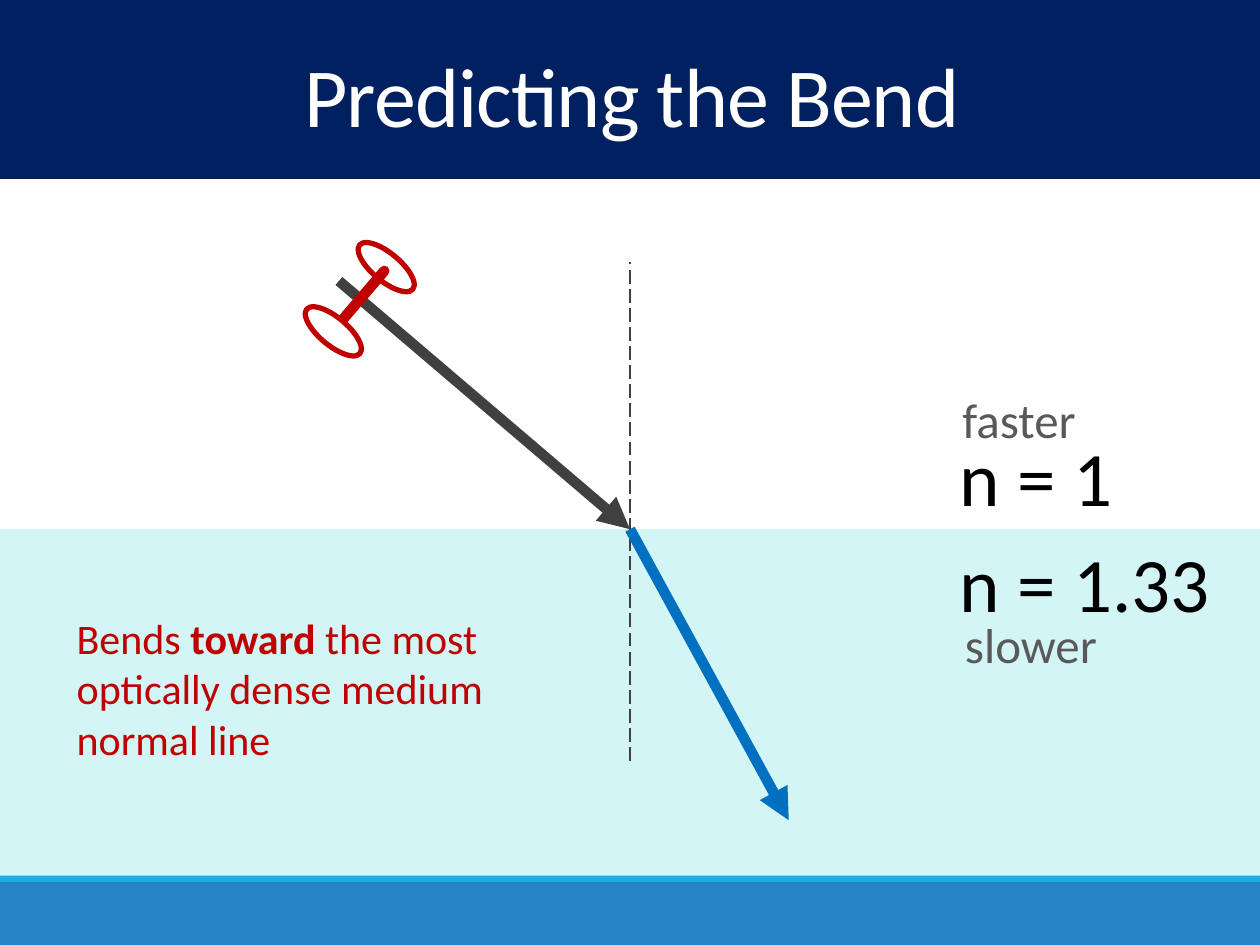
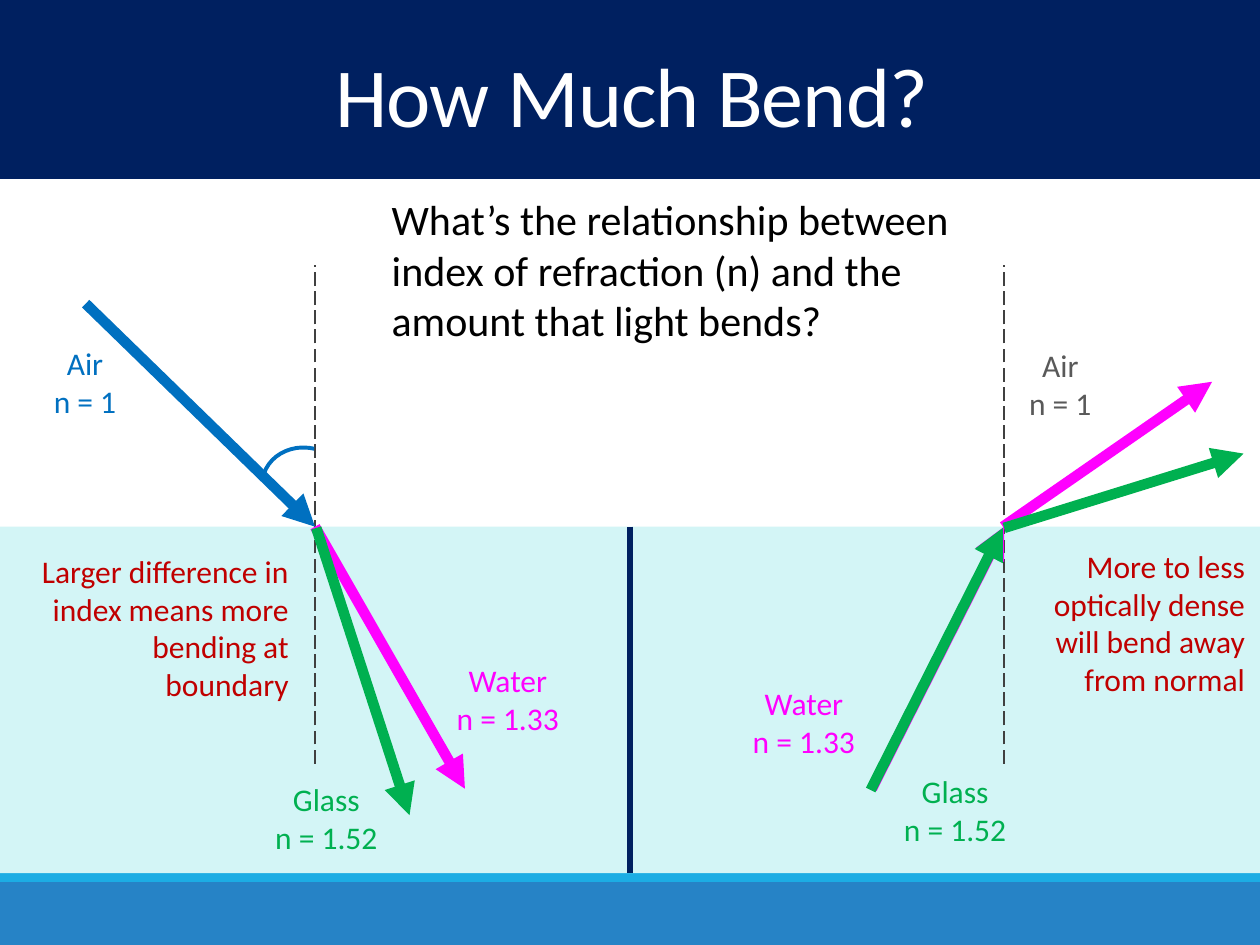
from lxml.etree import SubElement
from pptx import Presentation
from pptx.dml.color import RGBColor
from pptx.enum.dml import MSO_LINE
from pptx.enum.shapes import MSO_CONNECTOR, MSO_SHAPE
from pptx.enum.text import MSO_ANCHOR, MSO_AUTO_SIZE, PP_ALIGN
from pptx.oxml.ns import qn
from pptx.util import Inches, Pt

NAVY = RGBColor(0x00, 0x20, 0x60)
FOOTER_BLUE = RGBColor(0x26, 0x83, 0xC6)
FOOTER_EDGE = RGBColor(0x1C, 0xAD, 0xE4)
WATER = RGBColor(0xD3, 0xF5, 0xF6)
RAY_BLUE = RGBColor(0x00, 0x70, 0xC0)
MAGENTA = RGBColor(0xFF, 0x00, 0xFF)
GREEN = RGBColor(0x00, 0xB0, 0x50)
RED = RGBColor(0xC0, 0x00, 0x00)
CHARCOAL = RGBColor(0x40, 0x40, 0x40)
GREY = RGBColor(0x59, 0x59, 0x59)
BLACK = RGBColor(0x00, 0x00, 0x00)
WHITE = RGBColor(0xFF, 0xFF, 0xFF)

FONT = "Calibri"
COLUMNS, ROWS = 100, 75
TOP, BOTTOM = 0, 2
RAY_WIDTH = 6


class Deck:
    """Holds the style and the current slide; places are in grid columns and rows."""

    def __init__(self):
        self.prs = Presentation()
        self.prs.slide_width, self.prs.slide_height = Inches(10), Inches(7.5)
        self.slide = None

    def grid(self, *places):
        """Turn alternating columns and rows into lengths."""
        cells = (self.prs.slide_width / COLUMNS, self.prs.slide_height / ROWS)
        return [round(place * cells[i % 2]) for i, place in enumerate(places)]

    def new_slide(self, heading):
        self.slide = self.prs.slides.add_slide(self.prs.slide_layouts[5])
        self.band(70, 5, FOOTER_BLUE)
        self.band(69.3, 0.7, FOOTER_EDGE)
        self.band(0, 14.2, NAVY)
        title = self.slide.shapes.title
        self.slide.shapes._spTree.append(title._element)  # above the band
        title.left, title.top, title.width, title.height = self.grid(0.3, 3.9, 99.7, 8.4)
        title.text_frame.vertical_anchor = MSO_ANCHOR.MIDDLE
        title.text_frame.auto_size = MSO_AUTO_SIZE.NONE
        paragraph = title.text_frame.paragraphs[0]
        paragraph.alignment = PP_ALIGN.CENTER
        paragraph.line_spacing = 0.85
        run = self.run(paragraph, heading, 48, WHITE)
        run._r.get_or_add_rPr().set("spc", "-50")

    def run(self, paragraph, words, size, color, bold=False):
        run = paragraph.add_run()
        run.text = words
        run.font.name, run.font.size, run.font.bold = FONT, Pt(size), bold
        run.font.color.rgb = color
        return run

    def shape(self, kind, place, fill=None, line=None, width=1.0, rotation=0):
        shape = self.slide.shapes.add_shape(kind, *self.grid(*place))
        shape.shadow.inherit = False
        shape.rotation = rotation
        if fill is None:
            shape.fill.background()
        else:
            shape.fill.solid()
            shape.fill.fore_color.rgb = fill
        if line is None:
            shape.line.fill.background()
        else:
            shape.line.color.rgb = line
            shape.line.width = Pt(width)
        return shape

    def band(self, row, height, color):
        """Draw a strip across the whole slide."""
        return self.shape(MSO_SHAPE.RECTANGLE, (0, row, COLUMNS, height), color)

    def line(self, start, end, color, width=RAY_WIDTH):
        line = self.slide.shapes.add_connector(
            MSO_CONNECTOR.STRAIGHT, *self.grid(*start, *end))
        line.line.color.rgb = color
        line.line.width = Pt(width)
        SubElement(line._element.spPr, qn("a:effectLst"))
        return line

    def ray(self, start, end, color):
        ray = self.line(start, end, color)
        SubElement(ray.line._get_or_add_ln(), qn("a:tailEnd"), type="triangle")
        return ray

    def normal(self, column, top, bottom):
        """Draw the dashed line perpendicular to the boundary."""
        self.line((column, bottom), (column, top), CHARCOAL, 1).line.dash_style = MSO_LINE.LONG_DASH

    def text(self, place, paragraphs, size, color, align=PP_ALIGN.LEFT, wrap=True):
        """Write paragraphs; words between ** marks are bold."""
        frame = self.slide.shapes.add_textbox(*self.grid(*place)).text_frame
        frame.word_wrap = wrap
        frame.auto_size = MSO_AUTO_SIZE.SHAPE_TO_FIT_TEXT
        for i, words in enumerate(paragraphs):
            paragraph = frame.add_paragraph() if i else frame.paragraphs[0]
            paragraph.alignment = align
            for j, part in enumerate(words.split("**")):
                self.run(paragraph, part, size, color, bold=j % 2 == 1)

    def medium(self, name, index, column, row, color):
        """Label a medium with its index of refraction."""
        width = 7.9 if name == "Air" else 11.2
        self.text((column, row, width, 7.1), (name, f"n = {index}"), 18, color,
                  PP_ALIGN.CENTER, wrap=False)

    def wheel(self, column, row):
        self.shape(MSO_SHAPE.OVAL, (column, row, 5.5, 2.2), WHITE, RED, 3, 39.8)

    def wheels(self):
        """Draw the pair of wheels on an axle that rolls along the ray."""
        self.wheel(27.9, 20.1)
        axle = self.line((30.5, 21.5), (26.4, 26.3), RED)
        axle.line._get_or_add_ln().set("cap", "rnd")
        self.wheel(23.7, 25.2)


def predicting_slide(deck):
    deck.new_slide("Predicting the Bend")
    water = deck.band(42, 27.5, WATER)
    boundary = (50, 42)
    incident = deck.ray((26.9, 22.3), boundary, CHARCOAL)
    incident.end_connect(water, TOP)
    deck.normal(50, 20.8, 60.4)
    refracted = deck.ray(boundary, (62.6, 65.1), RAY_BLUE)
    refracted.begin_connect(water, TOP)
    deck.text((5.1, 48.1, 39.9, 13.1),
              ["Bends **toward** the most optically dense medium normal line"], 24, RED)
    deck.wheels()
    for words, place, size, color in (
        ("n = 1", (75.2, 33.6, 14.2, 8.4), 44, BLACK),
        ("n = 1.33", (75.2, 42, 22, 8.4), 44, BLACK),
        ("faster", (75.4, 30.4, 11.5, 5.7), 28, GREY),
        ("slower", (75.6, 48.3, 13.5, 5.7), 28, GREY),
    ):
        deck.text(place, [words], size, color, wrap=False)


def how_much_slide(deck):
    deck.new_slide("How Much Bend?")
    water = deck.band(41.8, 27.5, WATER)
    divider = deck.line((50, 41.8), (50, 69.3), NAVY, 3)
    divider.begin_connect(water, TOP)
    divider.end_connect(water, BOTTOM)
    for column in (25, 79.7):
        deck.normal(column, 21, 60.6)
    angle = deck.shape(MSO_SHAPE.ARC, (21.1, 35.2, 6.4, 7.1), None, RAY_BLUE, 2.25, 289.1)
    angle.adjustments[0], angle.adjustments[1] = 162, 211.43

    for start, end, color in (
        ((25, 41.8), (36.9, 62.6), MAGENTA),
        ((25.1, 41.9), (32.5, 64.7), GREEN),
        ((6.8, 24.1), (25, 41.8), RAY_BLUE),
        ((69.2, 62.6), (79.7, 41.8), MAGENTA),
        ((79.6, 41.8), (96.2, 30.3), MAGENTA),
        ((69.1, 62.7), (79.6, 41.9), GREEN),
        ((79.7, 41.9), (98.7, 36), GREEN),
    ):
        deck.ray(start, end, color)

    for label in (
        ("Air", 1, 2.8, 26.8, RAY_BLUE),
        ("Water", 1.33, 34.7, 52, MAGENTA),
        ("Glass", 1.52, 20.3, 61.4, GREEN),
        ("Air", 1, 80.2, 27, GREY),
        ("Water", 1.33, 58.2, 53.8, MAGENTA),
        ("Glass", 1.52, 70.2, 60.8, GREEN),
    ):
        deck.medium(*label)

    deck.text((30.1, 14.9, 46.9, 13.1),
              ["What’s the relationship between index of refraction (n) "
               "and the amount that light bends?"], 24, BLACK)
    deck.text((1.8, 43.3, 22.1, 13.1),
              ["Larger difference in index means more bending at boundary"],
              18, RED, PP_ALIGN.RIGHT)
    deck.text((80.1, 42.9, 19.7, 13.1),
              ["More to less optically dense will bend away from normal"],
              18, RED, PP_ALIGN.RIGHT)


def main():
    deck = Deck()
    predicting_slide(deck)
    how_much_slide(deck)
    deck.prs.save("out.pptx")


if __name__ == "__main__":
    main()
